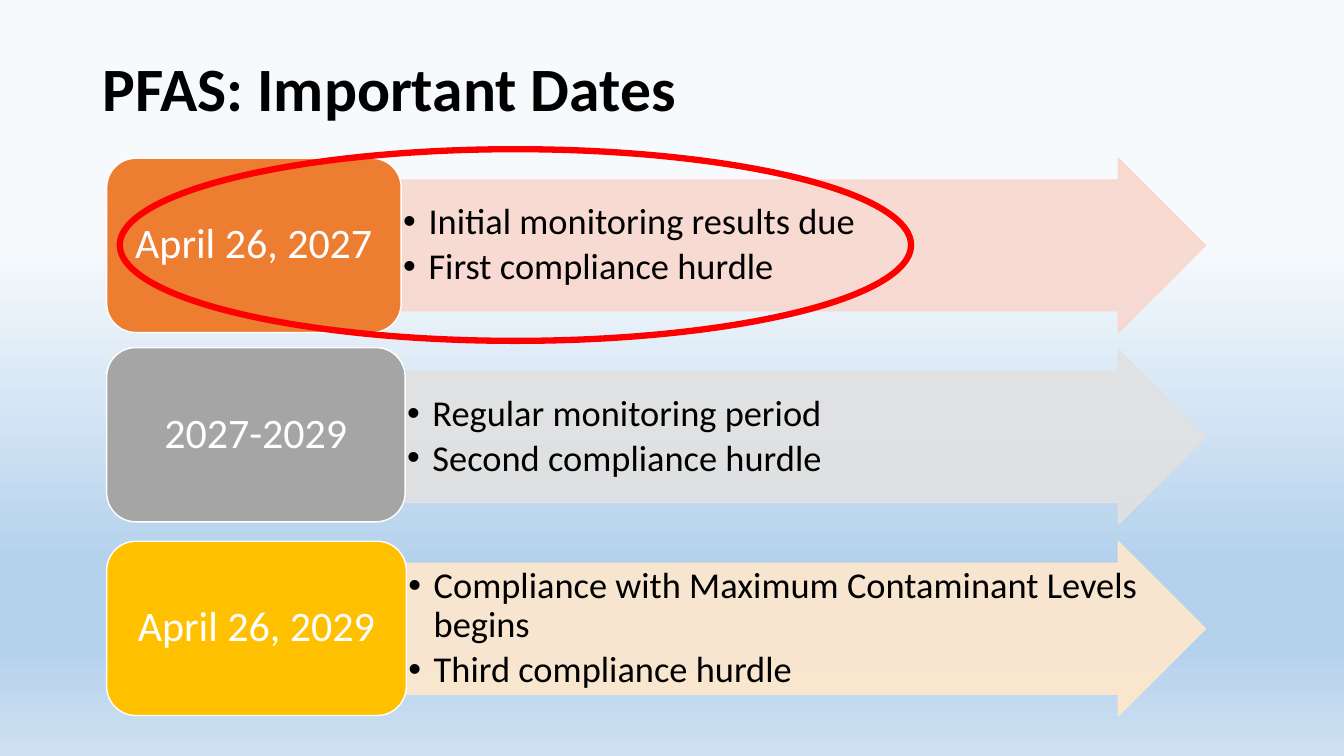
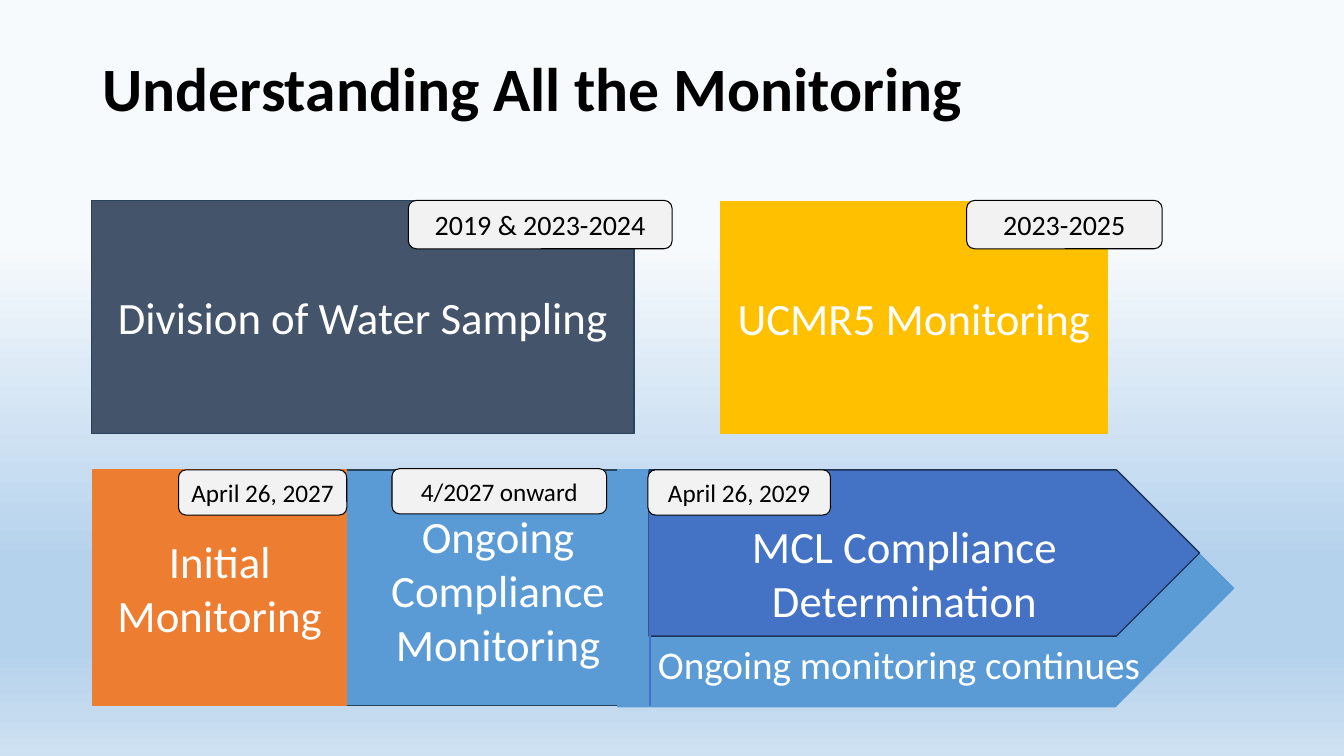
from dataclasses import dataclass
from typing import Any, Optional

from lxml import etree
from pptx import Presentation, util as u
from pptx.dml import color
from pptx.enum import shapes, text
from pptx.oxml import ns

FONT = "Calibri"
BLACK, WHITE, RED = "000000", "FFFFFF", "FF0000"
ORANGE, GREY, GOLD = "ED7D31", "A5A5A5", "FFC000"
BLUE, ROYAL, SLATE, NAVY = "5B9BD5", "4472C4", "44546A", "28445D"
LABEL_FILL = "F2F2F2"
BACKGROUND_STOPS = [(32, "F7FAFD"), (74, "B5D2EC"), (86, "B5D2EC"), (100, "CEE1F2")]

RECTANGLE = shapes.MSO_SHAPE.RECTANGLE
ROUNDED = shapes.MSO_SHAPE.ROUNDED_RECTANGLE
PENTAGON = shapes.MSO_SHAPE.PENTAGON
ARROW = shapes.MSO_SHAPE.RIGHT_ARROW
CENTER = text.PP_ALIGN.CENTER

DATE_LEFT, ARROW_RIGHT = 2.69, 30.38
FIRST_ARROW_TOP, ARROW_PITCH, ROW_HEIGHT = 3.99, 4.83, 4.39


@dataclass
class Box:
    left: float
    top: float
    width: float
    height: float


@dataclass
class Milestone:
    date: str
    points: str
    split: float
    date_top: float
    fill: str
    tint: str


@dataclass
class Panel:
    kind: Any
    box: Box
    fill: str
    line: str
    caption: str = ""


@dataclass
class Label:
    box: Box
    caption: str
    size: float


MILESTONES = [
    Milestone("April 26, 2027", "Initial monitoring results due\nFirst compliance hurdle",
              10.11, 3.99, ORANGE, "F8D7CE"),
    Milestone("2027-2029", "Regular monitoring period\nSecond compliance hurdle",
              10.21, 8.76, GREY, "E1E1E1"),
    Milestone("April 26, 2029",
              "Compliance with Maximum Contaminant Levels begins\nThird compliance hurdle",
              10.24, 13.64, GOLD, "FFE8CC"),
]

PANELS = [
    Panel(RECTANGLE, Box(8.74, 11.84, 7.42, 5.94), BLUE, NAVY),
    Panel(RECTANGLE, Box(2.34, 11.84, 6.4, 5.94), ORANGE, ORANGE, "Initial\nMonitoring"),
    Panel(PENTAGON, Box(15.57, 11.84, 15.52, 5.97), BLUE, BLUE),
    Panel(PENTAGON, Box(16.36, 11.84, 13.87, 4.19), ROYAL, "1E3256"),
    Panel(RECTANGLE, Box(18.16, 5.08, 9.75, 5.84), GOLD, GOLD, "UCMR5 Monitoring"),
    Panel(RECTANGLE, Box(2.31, 5.05, 13.67, 5.87), SLATE, NAVY, "Division of Water Sampling"),
]

LABELS = [
    Label(Box(24.36, 5.05, 4.93, 1.22), "2023-2025", 20),
    Label(Box(10.29, 5.05, 6.65, 1.22), "2019 & 2023-2024", 20),
    Label(Box(4.5, 11.84, 4.24, 1.14), "April 26, 2027", 18),
    Label(Box(16.33, 11.84, 4.6, 1.14), "April 26, 2029", 18),
    Label(Box(9.88, 11.81, 5.41, 1.14), "4/2027 onward", 18),
]


def rgb(value: str) -> color.RGBColor:
    return color.RGBColor.from_string(value)


def lengths(box: Box) -> list:
    return [u.Cm(value) for value in (box.left, box.top, box.width, box.height)]


def write(shape, content: str, *, size: float, ink: str = WHITE, bold: bool = False,
          align=CENTER, spacing: float = 1.0, after: float = 0,
          side: float = 0.25, edge: float = 0.13, bullet: bool = False) -> None:
    frame = shape.text_frame
    frame.word_wrap = True
    frame.vertical_anchor = text.MSO_ANCHOR.MIDDLE
    frame.margin_left = frame.margin_right = u.Cm(side)
    frame.margin_top = frame.margin_bottom = u.Cm(edge)
    frame.text = content
    for paragraph in frame.paragraphs:
        paragraph.alignment = align
        paragraph.line_spacing = spacing
        paragraph.space_after = u.Pt(after)
        if bullet:
            properties = paragraph._p.get_or_add_pPr()
            indent = u.Cm(0.64)
            properties.set("marL", str(indent))
            properties.set("indent", str(-indent))
            etree.SubElement(properties, ns.qn("a:buFont")).set("typeface", "Arial")
            etree.SubElement(properties, ns.qn("a:buChar")).set("char", "•")
        font = paragraph.font
        font.name, font.size, font.bold = FONT, u.Pt(size), bold
        font.color.rgb = rgb(ink)


def add_text(slide, box: Box, content: str, **style) -> None:
    write(slide.shapes.add_textbox(*lengths(box)), content, **style)


def add_panel(slide, kind, box: Box, fill: Optional[str], line: str,
              line_width: float = 1, opacity: int = 100):
    shape = slide.shapes.add_shape(kind, *lengths(box))
    shape.shadow.inherit = False
    if fill:
        shape.fill.solid()
        shape.fill.fore_color.rgb = rgb(fill)
    else:
        shape.fill.background()
    shape.line.color.rgb = rgb(line)
    shape.line.width = u.Pt(line_width)
    if opacity < 100:
        for tone in shape._element.spPr.iter(ns.qn("a:srgbClr")):
            etree.SubElement(tone, ns.qn("a:alpha")).set("val", str(opacity * 1000))
    return shape


def add_line(slide, x: float, top: float, bottom: float) -> None:
    line = slide.shapes.add_connector(
        shapes.MSO_CONNECTOR.STRAIGHT, u.Cm(x), u.Cm(top), u.Cm(x), u.Cm(bottom))
    line.line.color.rgb = rgb(ROYAL)
    line.line.width = u.Pt(1.5)
    etree.SubElement(line._element.spPr, ns.qn("a:effectLst"))


def set_background(master) -> None:
    fill = master.background.fill
    fill.gradient()
    fill.gradient_angle = 270
    stops = next(master._element.iter(ns.qn("a:gsLst")))
    for stop in list(stops):
        stops.remove(stop)
    for position, tone in BACKGROUND_STOPS:
        stop = etree.SubElement(stops, ns.qn("a:gs"))
        stop.set("pos", str(position * 1000))
        etree.SubElement(stop, ns.qn("a:srgbClr")).set("val", tone)


def new_slide(presentation, title: str):
    slide = presentation.slides.add_slide(presentation.slide_layouts[6])
    add_text(slide, Box(2.34, 1.02, 29.21, 2.59), title, size=44, ink=BLACK,
             bold=True, align=text.PP_ALIGN.LEFT, spacing=0.9)
    return slide


def build_dates(presentation) -> None:
    slide = new_slide(presentation, "PFAS: Important Dates")
    for row, milestone in enumerate(MILESTONES):
        arrow_box = Box(milestone.split, FIRST_ARROW_TOP + row * ARROW_PITCH,
                        ARROW_RIGHT - milestone.split, ROW_HEIGHT)
        arrow = add_panel(slide, ARROW, arrow_box, milestone.tint, milestone.tint, opacity=90)
        arrow.adjustments[0] = 0.75
        arrow.adjustments[1] = 0.5
        write(arrow, milestone.points, size=26, ink=BLACK, align=text.PP_ALIGN.LEFT,
              spacing=0.9, after=4, side=0.05, edge=0.05, bullet=True)
        date_box = Box(DATE_LEFT, milestone.date_top, milestone.split - DATE_LEFT, ROW_HEIGHT)
        date = add_panel(slide, ROUNDED, date_box, milestone.fill, WHITE)
        write(date, milestone.date, size=30, spacing=0.9)
    add_panel(slide, shapes.MSO_SHAPE.OVAL, Box(3.02, 3.76, 19.94, 4.83), None, RED, 4.5)


def build_monitoring(presentation) -> None:
    slide = new_slide(presentation, "Understanding All the Monitoring")
    for panel in PANELS:
        shape = add_panel(slide, panel.kind, panel.box, panel.fill, panel.line)
        if panel.caption:
            write(shape, panel.caption, size=32)
    add_text(slide, Box(8.76, 12.67, 7.59, 4.37), "Ongoing\nCompliance\nMonitoring", size=32)
    add_text(slide, Box(18.49, 12.93, 8.61, 3), "MCL Compliance Determination", size=32)
    add_text(slide, Box(16.33, 16, 12.9, 1.45), "Ongoing monitoring continues",
             size=28, align=text.PP_ALIGN.LEFT)
    add_line(slide, 16.38, 11.91, 17.78)
    for label in LABELS:
        shape = add_panel(slide, ROUNDED, label.box, LABEL_FILL, BLACK, 0.75)
        write(shape, label.caption, size=label.size, ink=BLACK, side=0.1, edge=0.1)


def main() -> None:
    presentation = Presentation()
    presentation.slide_width = u.Cm(33.87)
    presentation.slide_height = u.Cm(19.05)
    set_background(presentation.slide_master)
    build_dates(presentation)
    build_monitoring(presentation)
    presentation.save("out.pptx")


if __name__ == "__main__":
    main()
